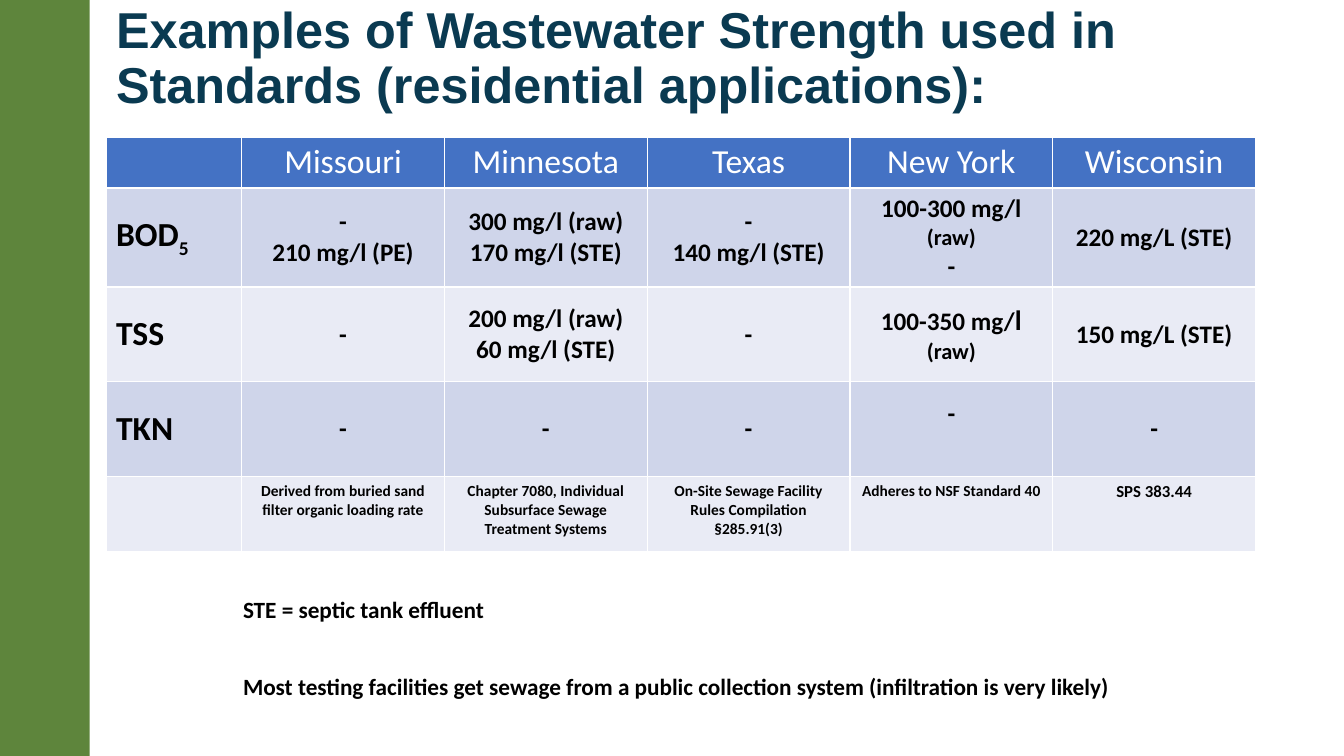
from dataclasses import dataclass

from lxml import etree
from pptx import Presentation
from pptx.dml.color import RGBColor
from pptx.enum.shapes import MSO_SHAPE
from pptx.enum.text import MSO_ANCHOR, MSO_AUTO_SIZE, PP_ALIGN
from pptx.oxml.ns import qn
from pptx.util import Cm, Pt

RECTANGLE = MSO_SHAPE.RECTANGLE
TOP, MIDDLE = MSO_ANCHOR.TOP, MSO_ANCHOR.MIDDLE
LEFT, CENTER = PP_ALIGN.LEFT, PP_ALIGN.CENTER
NO_AUTOFIT = MSO_AUTO_SIZE.NONE

TITLE = "Examples of Wastewater Strength used in Standards (residential applications):"
STATES = ["Missouri", "Minnesota", "Texas", "New York", "Wisconsin"]
DASH = "-"
MEASURES = [
    ([[("BOD", "label"), ("5", "subscript")]],
     [[DASH, "210 mg/l (PE)"],
      ["300 mg/l (raw)", "170 mg/l (STE)"],
      [DASH, "140 mg/l (STE)"],
      [[("100-300 mg/l ", "value"), ("(raw)", "raw")], DASH],
      ["220 mg/L (STE)"]]),
    (["TSS"],
     [[DASH],
      ["200 mg/l (raw)", "60 mg/l (STE)"],
      [DASH],
      [[("100-350 mg/", "value"), ("l ", "large"), ("(raw)", "raw")]],
      ["150 mg/L (STE)"]]),
    (["TKN"], [[DASH]] * len(STATES)),
]
SOURCES = [
    ["Derived from buried sand filter organic loading rate"],
    ["Chapter 7080, Individual Subsurface Sewage Treatment Systems"],
    ["On-Site Sewage Facility Rules Compilation", "§285.91(3)"],
    ["Adheres to NSF Standard 40"],
    [[("SPS 383.44", "code")]],
]
NOTES = [
    "STE = septic tank effluent",
    "Most testing facilities get sewage from a public collection system "
    "(infiltration is very likely)",
]

SLIDE_WIDTH, SLIDE_HEIGHT = Cm(33.87), Cm(19.05)
SIDEBAR_WIDTH = Cm(2.26)
TITLE_BOX = (Cm(2.67), Cm(0.13), Cm(30.38), Cm(2.64))
NOTES_BOX = (Cm(5.87), Cm(14.94), Cm(24), Cm(3.25))
TABLE_LEFT, TABLE_TOP = Cm(2.67), Cm(3.45)
COLUMN_WIDTHS = [Cm(3.42)] + [Cm(5.11)] * len(STATES)
ROW_HEIGHTS = [Cm(1.17)] + [Cm(2.39)] * len(MEASURES) + [Cm(1.88)]
RAISED_CELL, RAISED_MARGIN = (3, 4), Cm(0.9)


@dataclass(frozen=True)
class Theme:
    green: RGBColor = RGBColor(0x5E, 0x85, 0x3C)
    navy: RGBColor = RGBColor(0x0A, 0x3A, 0x51)
    blue: RGBColor = RGBColor(0x44, 0x72, 0xC4)
    bands: tuple = (RGBColor(0xE9, 0xEB, 0xF5), RGBColor(0xCF, 0xD5, 0xEA))
    white: RGBColor = RGBColor(0xFF, 0xFF, 0xFF)
    black: RGBColor = RGBColor(0, 0, 0)
    title: float = 36
    header: float = 24
    label: float = 24
    subscript: float = 24
    value: float = 18
    large: float = 20
    raw: float = 16
    source: float = 11
    code: float = 12
    note: float = 16.6


THEME = Theme()
NAMES = {"title": "Arial"}
COLORS = {"title": THEME.navy, "header": THEME.white}


def assign(target, values):
    for name, value in values.items():
        setattr(target, name, value)


def add_run(paragraph, text, style):
    run = paragraph.add_run()
    run.text = text
    assign(run.font, {"name": NAMES.get(style, "Calibri"),
                      "size": Pt(getattr(THEME, style)),
                      "bold": style != "header"})
    run.font.color.rgb = COLORS.get(style, THEME.black)
    if style == "subscript":
        run._r.get_or_add_rPr().set("baseline", "-25000")


def write(frame, paragraphs, style, **layout):
    for index, content in enumerate(paragraphs):
        paragraph = frame.paragraphs[0] if index == 0 else frame.add_paragraph()
        assign(paragraph, layout)
        runs = [(content, style)] if isinstance(content, str) else content
        for text, run_style in runs:
            add_run(paragraph, text, run_style)


def place(shape, box, **frame_values):
    assign(shape, dict(zip(("left", "top", "width", "height"), box)))
    assign(shape.text_frame, {"word_wrap": True, "auto_size": NO_AUTOFIT,
                              "vertical_anchor": TOP, **frame_values})


def add_borders(cell):
    properties = cell._tc.get_or_add_tcPr()
    for side in ("lnL", "lnR", "lnT", "lnB"):
        line = etree.SubElement(properties, qn("a:" + side), w=str(Pt(1)))
        fill = etree.SubElement(line, qn("a:solidFill"))
        etree.SubElement(fill, qn("a:srgbClr"), val=str(THEME.white))


def add_sidebar(slide):
    sidebar = slide.shapes.add_shape(RECTANGLE, 0, 0, SIDEBAR_WIDTH, SLIDE_HEIGHT)
    sidebar.shadow.inherit = False
    sidebar.fill.solid()
    sidebar.fill.fore_color.rgb = THEME.green
    sidebar.line.fill.background()


def add_standards_table(slide):
    rows = [[[]] + [[state] for state in STATES]]
    rows += [[label] + values for label, values in MEASURES]
    rows += [[[]] + SOURCES]
    styles = ["header"] + ["value"] * len(MEASURES) + ["source"]
    table = slide.shapes.add_table(
        len(rows), len(COLUMN_WIDTHS), TABLE_LEFT, TABLE_TOP,
        sum(COLUMN_WIDTHS), sum(ROW_HEIGHTS)).table
    for column, width in zip(table.columns, COLUMN_WIDTHS):
        column.width = width
    for row, height in zip(table.rows, ROW_HEIGHTS):
        row.height = height
    for row_index, (contents, style) in enumerate(zip(rows, styles)):
        for column_index, paragraphs in enumerate(contents):
            cell = table.cell(row_index, column_index)
            add_borders(cell)
            cell.fill.solid()
            cell.fill.fore_color.rgb = THEME.bands[row_index % 2] if row_index else THEME.blue
            cell.vertical_anchor = MIDDLE if style == "value" else TOP
            is_label = column_index == 0
            write(cell.text_frame, paragraphs, "label" if is_label else style,
                  alignment=LEFT if is_label else CENTER)
    table.cell(*RAISED_CELL).margin_bottom = RAISED_MARGIN


def add_title(slide):
    title = slide.shapes.title
    place(title, TITLE_BOX, margin_top=0, margin_bottom=0)
    write(title.text_frame, [TITLE], "title", alignment=LEFT, line_spacing=0.9)


def add_notes(slide):
    body = slide.placeholders[1]
    place(body, NOTES_BOX)
    write(body.text_frame, NOTES, "note", alignment=LEFT, line_spacing=0.9)
    for index, paragraph in enumerate(body.text_frame.paragraphs):
        paragraph.space_before = Pt(37.5 if index else 0)
        properties = paragraph._p.get_or_add_pPr()
        properties.set("marL", "0")
        properties.set("indent", "0")
        etree.SubElement(properties, qn("a:buNone"))


def main():
    presentation = Presentation()
    assign(presentation, {"slide_width": SLIDE_WIDTH, "slide_height": SLIDE_HEIGHT})
    slide = presentation.slides.add_slide(presentation.slide_layouts[1])
    add_sidebar(slide)
    add_standards_table(slide)
    add_notes(slide)
    add_title(slide)
    presentation.save("out.pptx")


if __name__ == "__main__":
    main()
